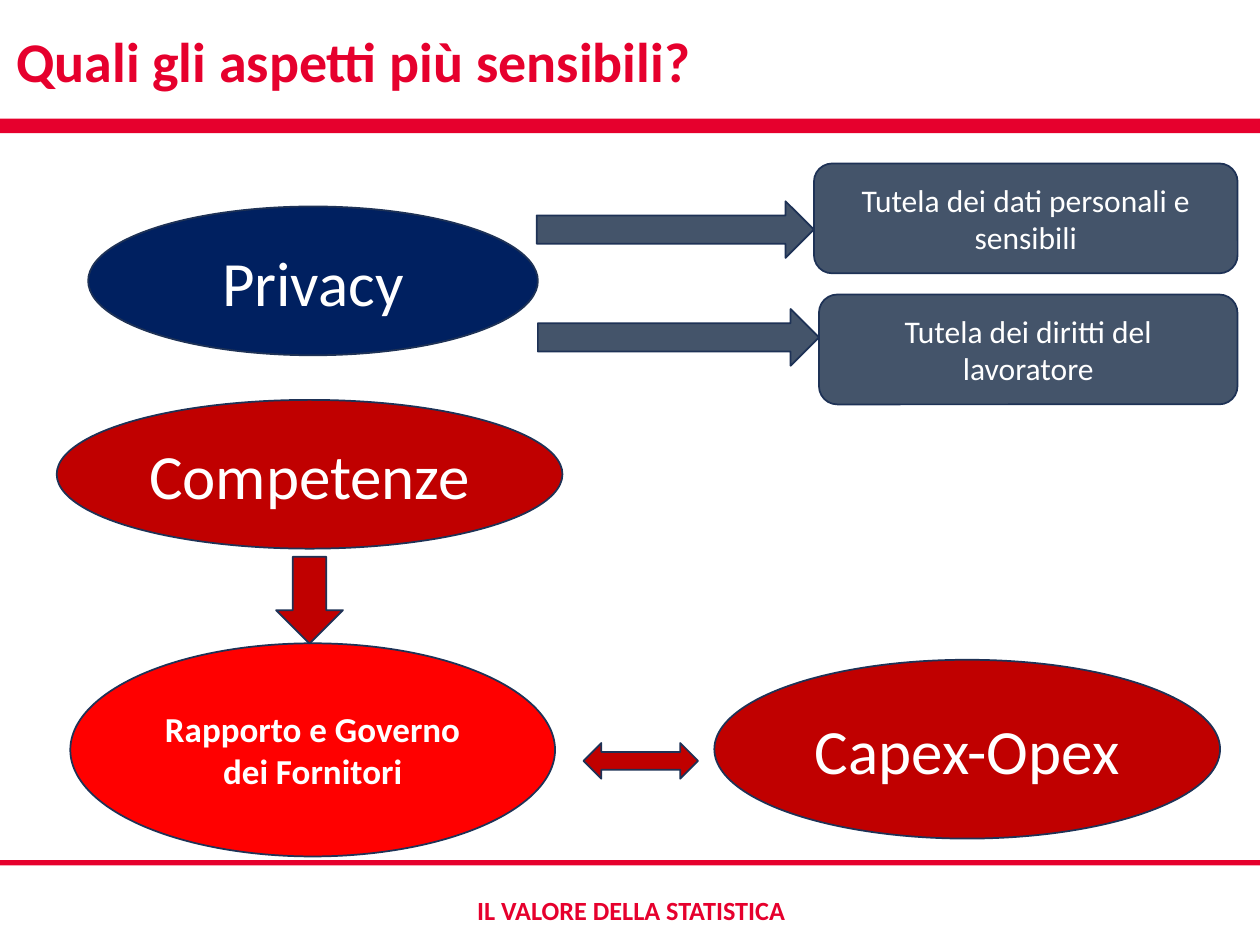
from dataclasses import dataclass
from pptx import Presentation
from pptx.dml.color import RGBColor as Rgb
from pptx.enum.shapes import MSO_SHAPE as Form
from pptx.enum.text import MSO_ANCHOR as Anchor, PP_ALIGN as Align
from pptx.util import Pt


@dataclass(frozen=True)
class Theme:
    font: str = "Calibri"
    brand: str = "E6002D"
    white: str = "FFFFFF"
    navy: str = "002060"
    slate: str = "44546A"
    wine: str = "C00000"
    red: str = "FF0000"
    edge: str = "1E3256"
    title: int = 32
    large: int = 36
    mid: int = 20
    note: int = 18
    foot: int = 15


class Deck:
    def __init__(self, theme, slide):
        self.theme = theme
        self.slide = slide

    def words(self, shape, text, size, color, bold=False, align=Align.CENTER):
        frame = shape.text_frame
        frame.word_wrap = True
        frame.vertical_anchor = Anchor.MIDDLE
        para = frame.paragraphs[0]
        para.alignment = align
        run = para.add_run()
        run.text = text
        font = run.font
        font.name = self.theme.font
        font.size = Pt(size)
        font.bold = bold
        font.color.rgb = Rgb.from_string(color)

    def label(self, box, text, size, align):
        shape = self.slide.shapes.add_textbox(*map(Pt, box))
        self.words(shape, text, size, self.theme.brand, True, align)

    def shape(self, form, box, fill):
        shape = self.slide.shapes.add_shape(form, *map(Pt, box))
        shape.shadow.inherit = False
        shape.fill.solid()
        shape.fill.fore_color.rgb = Rgb.from_string(fill)
        shape.line.color.rgb = Rgb.from_string(self.theme.edge)
        shape.line.width = Pt(1)
        return shape

    def band(self, top, high):
        shape = self.shape(Form.RECTANGLE, (0, top, 720, high), self.theme.brand)
        shape.line.fill.background()

    def node(self, form, box, fill, text, size, bold=False):
        shape = self.shape(form, box, fill)
        self.words(shape, text, size, self.theme.white, bold)


def main():
    show = Presentation()
    show.slide_width, show.slide_height = Pt(720), Pt(540)
    look = Theme()
    deck = Deck(look, show.slides.add_slide(show.slide_layouts[6]))

    deck.band(491.5, 3)
    deck.label((152.6, 507.6, 416.2, 25.2), "IL VALORE DELLA STATISTICA",
               look.foot, Align.CENTER)
    deck.band(67.8, 8.4)
    deck.label((2.2, 2.9, 709.2, 62.6), "Quali gli aspetti più sensibili?",
               look.title, Align.LEFT)

    deck.node(Form.OVAL, (50.4, 118, 257, 85), look.navy, "Privacy", look.large)

    right = 707.2
    rights = (
        (306.7, 115, 465.1, 93.4, "Tutela dei dati personali e sensibili"),
        (307.4, 176.6, 468, 168.3, "Tutela dei diritti del lavoratore"),
    )
    for start, mid, left, top, text in rights:
        deck.shape(Form.RIGHT_ARROW, (start, mid, left - start, 32.4), look.slate)
        deck.node(Form.ROUNDED_RECTANGLE, (left, top, right - left, 62.8),
                  look.slate, text, look.note)

    deck.node(Form.OVAL, (40.2, 367.6, 277, 121.8), look.red,
              "Rapporto e Governo dei Fornitori", look.mid, True)
    deck.node(Form.OVAL, (32.4, 228.5, 289, 85), look.wine,
              "Competenze", look.large)
    deck.shape(Form.DOWN_ARROW, (157.8, 318.2, 38.2, 49.6), look.wine)
    deck.node(Form.OVAL, (408.2, 377, 289, 102.2), look.wine,
              "Capex-Opex", look.large)
    deck.shape(Form.LEFT_RIGHT_ARROW, (333.4, 424.6, 65.5, 20.4), look.wine)

    show.save("out.pptx")


if __name__ == "__main__":
    main()
